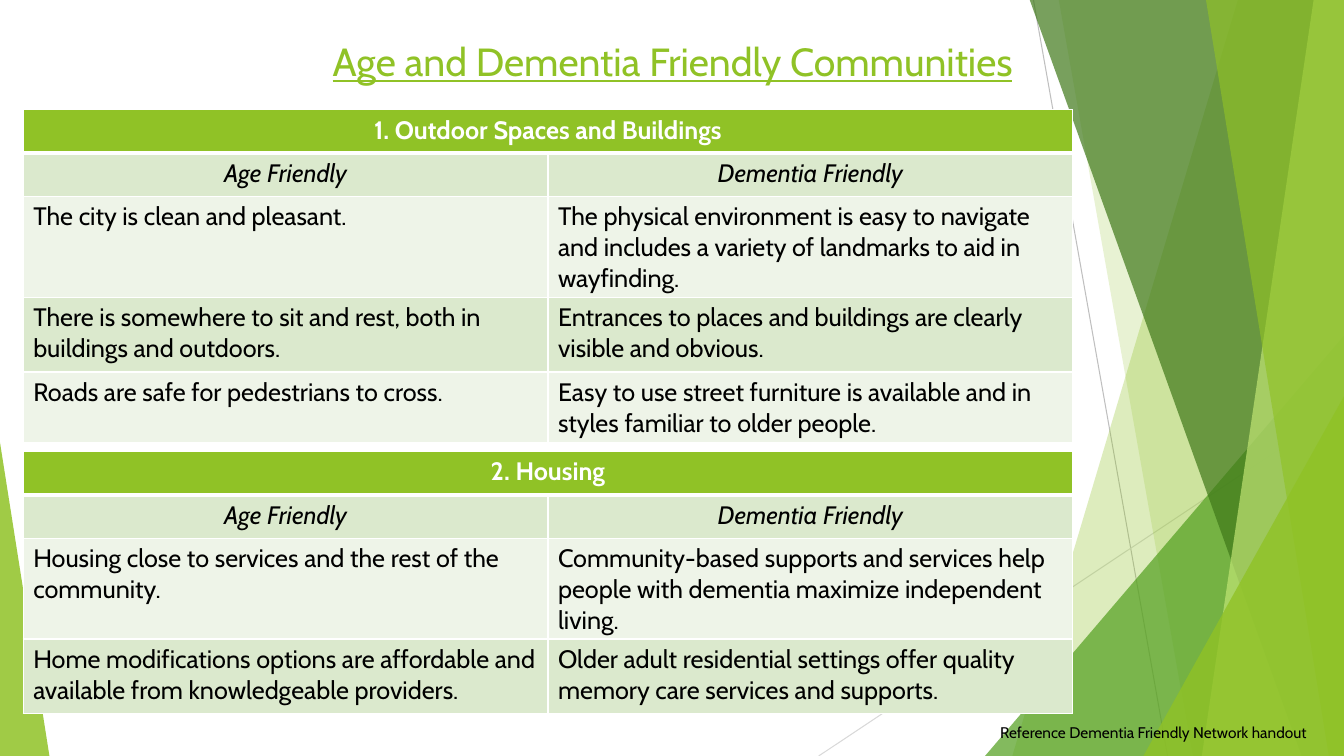
import pptx
import pptx.util
import pptx.dml.color
import pptx.enum.shapes
import pptx.enum.text
import pptx.oxml
import pptx.oxml.ns
import lxml.etree

Inches = pptx.util.Inches
Pt = pptx.util.Pt
ALIGN = pptx.enum.text.PP_ALIGN
WIDTH, HEIGHT, TOP = 13.33, 7.5, -0.01
COLORS = {
    "lime": "90C226", "green": "54A021", "forest": "3F7819", "pale": "C0E474",
    "band": "DBE9CD", "light": "EEF4E8", "white": "FFFFFF", "black": "000000",
    "gray": "BFBFBF", "silver": "D9D9D9",
}


def rgb(name):
    return pptx.dml.color.RGBColor.from_string(COLORS[name])


def write(frame, text, size=18, color="black", align=ALIGN.LEFT,
          bold=False, italic=False, underline=False):
    para = frame.paragraphs[0]
    para.alignment = align
    span = para.add_run()
    span.text = text
    font = span.font
    font.name, font.size = "Cabin", Pt(size)
    font.bold, font.italic, font.underline = bold, italic, underline
    font.color.rgb = rgb(color)


class SlideBuilder:
    """Holds the typeface style and the page being drawn."""

    def __init__(self, page):
        self.page = page

    def line(self, start, end, color):
        line = self.page.shapes.add_connector(
            pptx.enum.shapes.MSO_CONNECTOR.STRAIGHT, *map(Inches, start + end))
        line.line.color.rgb = rgb(color)
        line.line.width = Pt(0.75)
        properties = line.element.find(pptx.oxml.ns.qn("p:spPr"))
        lxml.etree.SubElement(properties, pptx.oxml.ns.qn("a:effectLst"))

    def paint(self, shape, color, opacity):
        shape.shadow.inherit = False
        shape.line.fill.background()
        shape.fill.solid()
        shape.fill.fore_color.rgb = rgb(color)
        tint = shape.element.find(".//" + pptx.oxml.ns.qn("a:srgbClr"))
        alpha = lxml.etree.SubElement(tint, pptx.oxml.ns.qn("a:alpha"))
        alpha.set("val", str(opacity * 1000))

    def shard(self, top_x, bottom_x, color, opacity):
        """Fill from a slanted left edge to the right edge of the page."""
        outline = self.page.shapes.build_freeform(Inches(top_x), Inches(TOP))
        corners = [(WIDTH, TOP), (WIDTH, HEIGHT), (bottom_x, HEIGHT)]
        outline.add_line_segments([(Inches(x), Inches(y)) for x, y in corners])
        self.paint(outline.convert_to_shape(), color, opacity)

    def triangle(self, left, top, width, apex, color, opacity):
        """Stand a triangle on the bottom edge; apex runs from 0 to 1."""
        shape = self.page.shapes.add_shape(
            pptx.enum.shapes.MSO_SHAPE.ISOSCELES_TRIANGLE,
            *map(Inches, (left, top, width, HEIGHT - top)))
        shape.adjustments[0] = apex
        self.paint(shape, color, opacity)

    def title(self, text, left, top, width, height):
        title = self.page.shapes.title
        title.left, title.top, title.width, title.height = map(
            Inches, (left, top, width, height))
        title.text_frame.vertical_anchor = pptx.enum.text.MSO_ANCHOR.MIDDLE
        title.text_frame.word_wrap = True
        write(title.text_frame, text, size=28, color="lime",
              align=ALIGN.RIGHT, underline=True)
        title.element.getparent().append(title.element)  # bring to front

    def text(self, text, left, top, width, height, **style):
        box = self.page.shapes.add_textbox(*map(Inches, (left, top, width, height)))
        box.text_frame.word_wrap = True
        write(box.text_frame, text, **style)

    def cell_style(self, cell, fill, top=1, bottom=1):
        properties = cell._tc.get_or_add_tcPr()
        for side, width in (("L", 1), ("R", 1), ("T", top), ("B", bottom)):
            properties.append(pptx.oxml.parse_xml(
                f'<a:ln{side} {pptx.oxml.ns.nsdecls("a")} w="{Pt(width)}"><a:solidFill>'
                f'<a:srgbClr val="{COLORS["white"]}"/></a:solidFill></a:ln{side}>'))
        cell.fill.solid()
        cell.fill.fore_color.rgb = rgb(fill)

    def comparison(self, heading, pairs, top, row_heights):
        """Table with a merged heading, two column names and text pairs."""
        table = self.page.shapes.add_table(
            len(row_heights), 2, Inches(0.23), Inches(top),
            Inches(10.41), Inches(sum(row_heights))).table
        table.horz_banding = False
        for column in table.columns:
            column.width = Inches(5.205)
        for row, height in zip(table.rows, row_heights):
            row.height = Inches(height)
        for column in range(2):
            self.cell_style(table.cell(0, column), "lime", bottom=3)
        table.cell(0, 0).merge(table.cell(0, 1))
        write(table.cell(0, 0).text_frame, heading, color="white",
              align=ALIGN.CENTER, bold=True)
        names = ("Age Friendly", "Dementia Friendly")
        for index, pair in enumerate([names, *pairs], 1):
            is_names = index == 1
            for column, text in enumerate(pair):
                cell = table.cell(index, column)
                self.cell_style(cell, "band" if index % 2 else "light",
                                top=3 if is_names else 1)
                write(cell.text_frame, text, italic=is_names,
                      align=ALIGN.CENTER if is_names else ALIGN.LEFT)


OUTDOORS = [
    ("The city is clean and pleasant.",
     "The physical environment is easy to navigate and includes a variety of "
     "landmarks to aid in wayfinding."),
    ("There is somewhere to sit and rest, both in buildings and outdoors.",
     "Entrances to places and buildings are clearly visible and obvious."),
    ("Roads are safe for pedestrians to cross.",
     "Easy to use street furniture is available and in styles familiar to older people."),
]
HOUSING = [
    ("Housing close to services and the rest of the community.",
     "Community-based supports and services help people with dementia maximize "
     "independent living."),
    ("Home modifications options are affordable and available from knowledgeable providers.",
     "Older adult residential settings offer quality memory care services and supports."),
]


def main():
    deck = pptx.Presentation()
    deck.slide_width, deck.slide_height = Inches(WIDTH), Inches(HEIGHT)
    slide = SlideBuilder(deck.slides.add_slide(deck.slide_layouts[5]))

    slide.line((10.25, 0), (11.58, HEIGHT), "gray")
    slide.line((WIDTH, 4.03), (8.12, HEIGHT), "silver")
    slide.shard(12.28, 10.04, "lime", 30)
    slide.shard(10.5, 11.83, "lime", 20)
    slide.triangle(9.77, 3.33, 3.56, 1, "green", 72)
    slide.shard(10.21, 12.91, "forest", 70)
    slide.shard(13.03, 11.92, "pale", 70)
    slide.shard(11.96, 13.18, "lime", 65)
    slide.triangle(11.34, 3.93, 1.99, 1, "lime", 80)
    slide.triangle(0, 4.39, 0.49, 0, "lime", 85)

    slide.title("Age and Dementia Friendly Communities", 0.23, 0.3, 9.91, 0.61)
    slide.text("Reference Dementia Friendly Network handout",
               9.82, 7.12, 3.7, 0.29, size=11)
    slide.comparison("1. Outdoor Spaces and Buildings", OUTDOORS, 1.09,
                     [0.43, 0.43, 0.93, 0.74, 0.65])
    slide.comparison("2. Housing", HOUSING, 4.48, [0.43, 0.43, 0.93, 0.74])
    deck.save("out.pptx")


if __name__ == "__main__":
    main()
